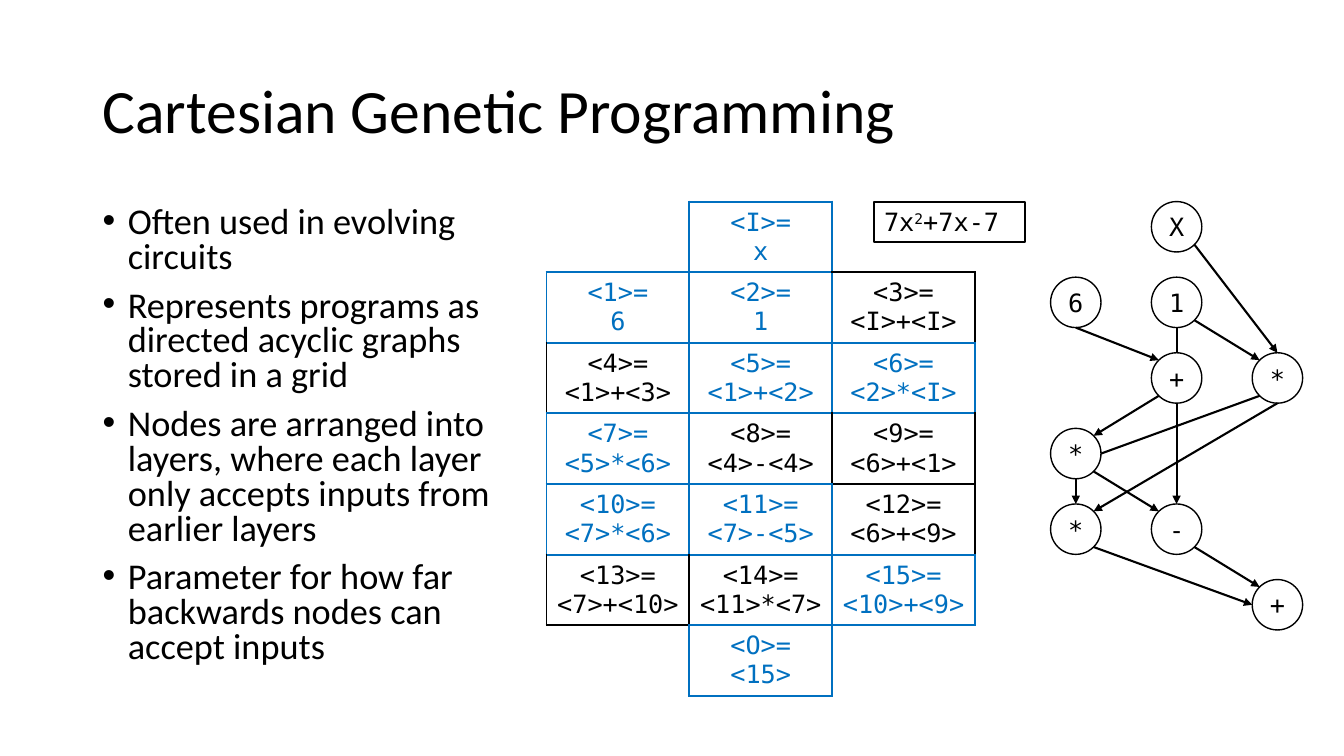
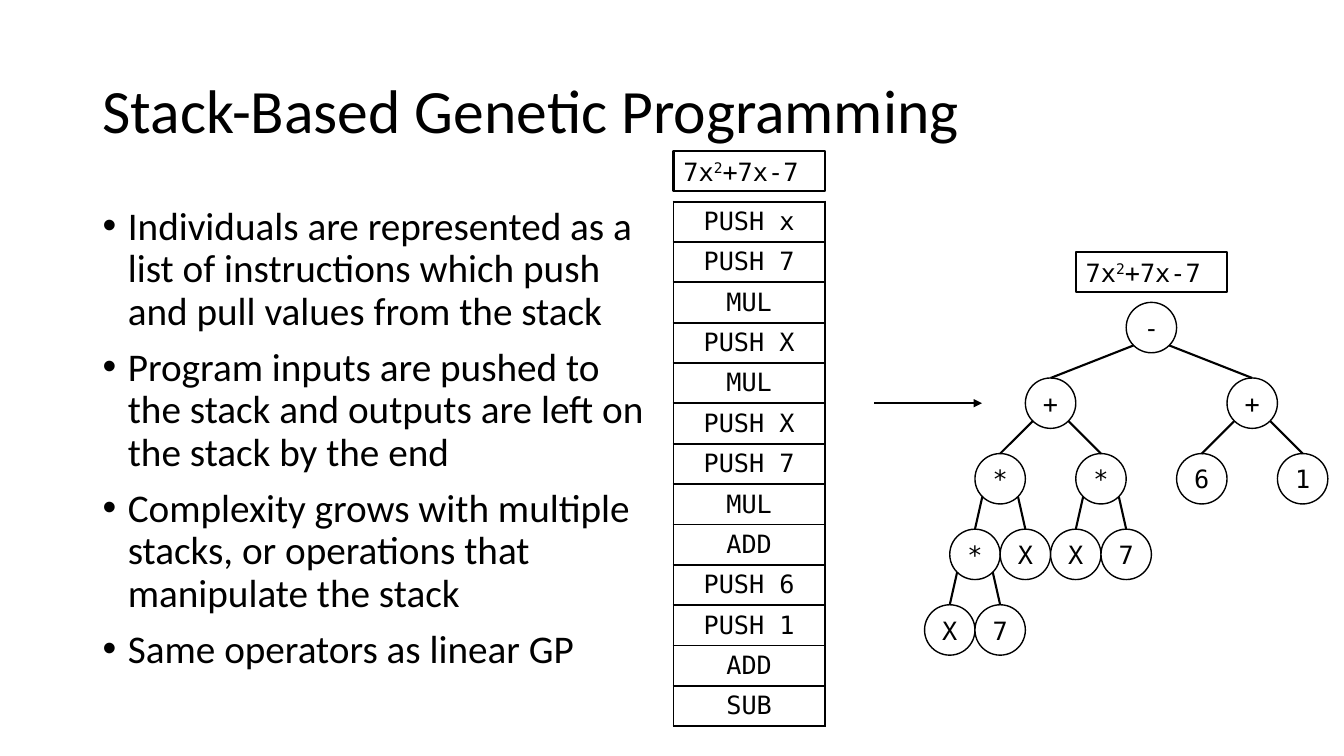
"""Build two slides on Cartesian and stack-based genetic programming."""
import math
from typing import Any, NamedTuple

from lxml import etree
from pptx import Presentation
from pptx.dml.color import RGBColor
from pptx.enum.shapes import MSO_CONNECTOR, MSO_SHAPE
from pptx.enum.text import MSO_ANCHOR, MSO_AUTO_SIZE, PP_ALIGN
from pptx.oxml.ns import qn
from pptx.util import Inches, Pt

STRAIGHT = MSO_CONNECTOR.STRAIGHT
ELLIPSE = MSO_SHAPE.OVAL
MIDDLE = MSO_ANCHOR.MIDDLE
CENTER = PP_ALIGN.CENTER
LEFT = PP_ALIGN.LEFT
GROW = MSO_AUTO_SIZE.SHAPE_TO_FIT_TEXT

COLORS = {"black": "000000", "blue": "0070C0", "white": "FFFFFF"}
BODY_FONT = "Calibri"
CODE_FONT = "DejaVu Sans Mono"
CODE_SIZE = 18
TITLE_SIZE = 44
LINE_WIDTH = 1.5
NODE_SIZE = 0.5
BULLET_INDENT = 0.25
PLAIN_TABLE_STYLE = "{2D5ABB26-0587-4C30-8999-92F81FD0307C}"

TOP, TOP_LEFT, SIDE_LEFT, BOTTOM_LEFT, BOTTOM, BOTTOM_RIGHT, SIDE_RIGHT, TOP_RIGHT = range(8)


class Grid(NamedTuple):
    """Top-left corner and steps of a node grid, in inches."""
    left: float
    top: float
    column_step: float
    row_step: float


class Node(NamedTuple):
    """A labelled circle in a grid."""
    key: str
    label: str
    column: int
    row: int


class Link(NamedTuple):
    """A line between connection sites of two nodes."""
    start: str
    start_site: int
    end: str
    end_site: int
    arrow: bool = True


class Cell(NamedTuple):
    """Lines of a table cell and the colour of its text and edges."""
    lines: tuple[str, ...] = ()
    color: str = ""


class Bullets(NamedTuple):
    """The bullet list of a slide."""
    width: float
    size: float
    spacing: float
    items: tuple[str, ...]


CARTESIAN_BULLETS = Bullets(4.5, 25.9, 0.8, (
    "Often used in evolving circuits",
    "Represents programs as directed acyclic graphs stored in a grid",
    "Nodes are arranged into layers, where each layer only accepts inputs from earlier layers",
    "Parameter for how far backwards nodes can accept inputs",
))
STACK_BULLETS = Bullets(5.67, 28, 0.9, (
    "Individuals are represented as a list of instructions which push and pull values from the stack",
    "Program inputs are pushed to the stack and outputs are left on the stack by the end",
    "Complexity grows with multiple stacks, or operations that manipulate the stack",
    "Same operators as linear GP",
))

GENES = (
    ("", "<I>= x", ""),
    ("<1>= 6", "<2>= 1", "<3>= <I>+<I>"),
    ("<4>= <1>+<3>", "<5>= <1>+<2>", "<6>= <2>*<I>"),
    ("<7>= <5>*<6>", "<8>= <4>-<4>", "<9>= <6>+<1>"),
    ("<10>= <7>*<6>", "<11>= <7>-<5>", "<12>= <6>+<9>"),
    ("<13>= <7>+<10>", "<14>= <11>*<7>", "<15>= <10>+<9>"),
    ("", "<O>= <15>", ""),
)
UNUSED_GENES = {f"<{number}>=" for number in (3, 4, 8, 9, 12, 13, 14)}
INSTRUCTIONS = ("PUSH x", "PUSH 7", "MUL", "PUSH X", "MUL", "PUSH X", "PUSH 7",
                "MUL", "ADD", "PUSH 6", "PUSH 1", "ADD", "SUB")

GRAPH_GRID = Grid(10.42, 2, 1, 0.75)
GRAPH_NODES = (
    Node("x", "X", 1, 0), Node("one", "1", 1, 1), Node("six", "6", 0, 1),
    Node("seven", "+", 1, 2), Node("x_times", "*", 2, 2), Node("product", "*", 0, 3),
    Node("square", "*", 0, 4), Node("minus", "-", 1, 4), Node("output", "+", 2, 5),
)
GRAPH_LINKS = (
    Link("x", BOTTOM_RIGHT, "x_times", TOP),
    Link("one", BOTTOM, "seven", TOP, False),
    Link("six", BOTTOM, "seven", TOP_LEFT),
    Link("seven", BOTTOM_LEFT, "product", TOP_RIGHT),
    Link("x_times", BOTTOM_LEFT, "product", SIDE_RIGHT, False),
    Link("one", BOTTOM_RIGHT, "x_times", TOP_LEFT),
    Link("product", BOTTOM, "square", TOP),
    Link("x_times", BOTTOM, "square", TOP_RIGHT),
    Link("product", BOTTOM_RIGHT, "minus", TOP_LEFT),
    Link("seven", BOTTOM, "minus", TOP),
    Link("minus", BOTTOM_RIGHT, "output", TOP_LEFT),
    Link("square", BOTTOM_RIGHT, "output", SIDE_LEFT),
)

TREE_GRID = Grid(9.17, 3, 0.25, 0.75)
TREE_NODES = (
    Node("root", "-", 8, 0), Node("sum", "+", 4, 1), Node("seven", "+", 12, 1),
    Node("square", "*", 2, 2), Node("linear", "*", 6, 2),
    Node("six", "6", 10, 2), Node("one", "1", 14, 2),
    Node("product", "*", 1, 3), Node("square_x", "X", 3, 3),
    Node("linear_x", "X", 5, 3), Node("linear_7", "7", 7, 3),
    Node("product_x", "X", 0, 4), Node("product_7", "7", 2, 4),
)
TREE_CHILDREN = {
    "root": ("sum", "seven"), "sum": ("square", "linear"), "seven": ("six", "one"),
    "square": ("product", "square_x"), "linear": ("linear_x", "linear_7"),
    "product": ("product_x", "product_7"),
}
TREE_LINKS = tuple(
    Link(parent, site, child, TOP, False)
    for parent, children in TREE_CHILDREN.items()
    for site, child in zip((BOTTOM_LEFT, BOTTOM_RIGHT), children)
)


def rgb(name: str) -> RGBColor:
    """Look up a named colour."""
    return RGBColor.from_string(COLORS[name])


def apply_format(target: Any, values: dict[str, Any]) -> None:
    """Set each attribute named in a dict of format values."""
    for name, value in values.items():
        setattr(target, name, value)


def add_run(paragraph: Any, text: str, font: str, size: float, color: str = "black") -> Any:
    """Add a formatted run to a paragraph."""
    run = paragraph.add_run()
    run.text = text
    apply_format(run.font, {"name": font, "size": Pt(size)})
    run.font.color.rgb = rgb(color)
    return run


def outline(shape: Any, width: float) -> None:
    """Give a shape or connector a black line."""
    shape.line.color.rgb = rgb("black")
    shape.line.width = Pt(width)


def add_text_frame(slide: Any, left: float, top: float, width: float, height: float) -> Any:
    """Add a wrapping text box and return its frame."""
    box = slide.shapes.add_textbox(Inches(left), Inches(top), Inches(width), Inches(height))
    box.text_frame.word_wrap = True
    return box.text_frame


def add_bullets(slide: Any, bullets: Bullets) -> None:
    """Add the bullet list."""
    frame = add_text_frame(slide, 0.92, 2, bullets.width, 4.76)
    for index, item in enumerate(bullets.items):
        paragraph = frame.add_paragraph() if index else frame.paragraphs[0]
        apply_format(paragraph, {"line_spacing": bullets.spacing, "space_before": Pt(10)})
        properties = paragraph._p.get_or_add_pPr()
        indent = Inches(BULLET_INDENT)
        properties.set("marL", str(indent))
        properties.set("indent", str(-indent))
        etree.SubElement(properties, qn("a:buFont"), typeface="Arial")
        etree.SubElement(properties, qn("a:buChar"), char="•")
        add_run(paragraph, item, BODY_FONT, bullets.size)


def add_content_slide(presentation: Any, title: str, bullets: Bullets) -> Any:
    """Add a blank slide with a title and bullets."""
    slide = presentation.slides.add_slide(presentation.slide_layouts[6])
    frame = add_text_frame(slide, 0.92, 0.4, 11.5, 1.45)
    frame.vertical_anchor = MIDDLE
    frame.paragraphs[0].line_spacing = 0.9
    add_run(frame.paragraphs[0], title, BODY_FONT, TITLE_SIZE)
    add_bullets(slide, bullets)
    return slide


def add_formula(slide: Any, left: float, top: float) -> None:
    """Add the framed polynomial."""
    box = slide.shapes.add_textbox(Inches(left), Inches(top), Inches(1.5), Inches(0.4))
    outline(box, LINE_WIDTH)
    apply_format(box.text_frame, {"word_wrap": True, "auto_size": GROW})
    paragraph = box.text_frame.paragraphs[0]
    paragraph.alignment = LEFT
    for text, baseline in (("7x", 0), ("2", 30000), ("+7x-7", 0)):
        run = add_run(paragraph, text, CODE_FONT, CODE_SIZE)
        run._r.get_or_add_rPr().set("baseline", str(baseline))


def add_node(slide: Any, grid: Grid, node: Node) -> Any:
    """Add a circle at its grid place."""
    circle = slide.shapes.add_shape(
        ELLIPSE, Inches(grid.left + node.column * grid.column_step),
        Inches(grid.top + node.row * grid.row_step), Inches(NODE_SIZE), Inches(NODE_SIZE))
    circle.shadow.inherit = False
    circle.fill.solid()
    circle.fill.fore_color.rgb = rgb("white")
    outline(circle, 1)
    apply_format(circle.text_frame, {
        "margin_left": 0, "margin_right": 0, "margin_top": 0, "margin_bottom": 0,
        "word_wrap": False, "vertical_anchor": MIDDLE})
    paragraph = circle.text_frame.paragraphs[0]
    paragraph.alignment = CENTER
    add_run(paragraph, node.label, CODE_FONT, CODE_SIZE)
    return circle


def site_point(circle: Any, site: int) -> tuple[int, int]:
    """Return a circle's connection site, counted anticlockwise from the top."""
    angle = site * math.pi / 4
    radius = circle.width / 2
    return (round(circle.left + radius * (1 - math.sin(angle))),
            round(circle.top + radius * (1 - math.cos(angle))))


def add_line(slide: Any, start: tuple[int, int], end: tuple[int, int], arrow: bool) -> Any:
    """Add a straight line, with an arrowhead if asked."""
    connector = slide.shapes.add_connector(STRAIGHT, *start, *end)
    outline(connector, LINE_WIDTH)
    properties = connector.element.spPr
    if arrow:
        etree.SubElement(properties.find(qn("a:ln")), qn("a:tailEnd"), type="triangle")
    etree.SubElement(properties, qn("a:effectLst"))
    return connector


def add_graph(slide: Any, grid: Grid, nodes: tuple[Node, ...], links: tuple[Link, ...]) -> None:
    """Add nodes and the lines joined to them."""
    circles = {node.key: add_node(slide, grid, node) for node in nodes}
    for link in links:
        start, end = circles[link.start], circles[link.end]
        connector = add_line(slide, site_point(start, link.start_site),
                             site_point(end, link.end_site), link.arrow)
        joints = connector.element.nvCxnSpPr.cNvCxnSpPr
        for tag, circle, site in (("a:stCxn", start, link.start_site),
                                  ("a:endCxn", end, link.end_site)):
            etree.SubElement(joints, qn(tag), id=str(circle.shape_id), idx=str(site))


def edge_color(cells: list[list[Cell]], row: int, column: int, down: int, right: int) -> str:
    """Choose an edge's colour: blue wins over black, black over none."""
    colors = {cells[row][column].color}
    if 0 <= row + down < len(cells) and 0 <= column + right < len(cells[0]):
        colors.add(cells[row + down][column + right].color)
    return next((color for color in ("blue", "black") if color in colors), "")


def add_cell_table(slide: Any, cells: list[list[Cell]], left: float, width: float, row_height: float) -> None:
    """Add a table of centred code with coloured edges."""
    frame = slide.shapes.add_table(len(cells), len(cells[0]), Inches(left), Inches(2),
                                   Inches(width), Inches(row_height * len(cells)))
    table = frame.table
    apply_format(table, {"first_row": False, "horz_banding": False})
    next(frame.element.iter(qn("a:tableStyleId"))).text = PLAIN_TABLE_STYLE
    for row, row_cells in enumerate(cells):
        for column, content in enumerate(row_cells):
            cell = table.cell(row, column)
            cell.vertical_anchor = MIDDLE
            properties = cell._tc.get_or_add_tcPr()
            for tag, down, right in (("a:lnL", 0, -1), ("a:lnR", 0, 1), ("a:lnT", -1, 0), ("a:lnB", 1, 0)):
                color = edge_color(cells, row, column, down, right)
                if color:
                    edge = etree.SubElement(properties, qn(tag), w=str(Pt(LINE_WIDTH)))
                    etree.SubElement(etree.SubElement(edge, qn("a:solidFill")), qn("a:srgbClr"), val=COLORS[color])
            cell.fill.background()
            for index, text in enumerate(content.lines):
                paragraph = cell.text_frame.add_paragraph() if index else cell.text_frame.paragraphs[0]
                paragraph.alignment = CENTER
                add_run(paragraph, text, CODE_FONT, CODE_SIZE, content.color)


def gene_cell(text: str) -> Cell:
    """Turn a gene into a cell, black if the gene is unused."""
    lines = tuple(text.split())
    return Cell(lines, "black" if lines[0] in UNUSED_GENES else "blue") if lines else Cell()


def main() -> None:
    """Build and save the presentation."""
    presentation = Presentation()
    apply_format(presentation, {"slide_width": Inches(13.33), "slide_height": Inches(7.5)})

    slide = add_content_slide(presentation, "Cartesian Genetic Programming", CARTESIAN_BULLETS)
    add_cell_table(slide, [[gene_cell(text) for text in row] for row in GENES], 5.42, 4.25, 0.7)
    add_formula(slide, 8.67, 2)
    add_graph(slide, GRAPH_GRID, GRAPH_NODES, GRAPH_LINKS)

    slide = add_content_slide(presentation, "Stack-Based Genetic Programming", STACK_BULLETS)
    add_graph(slide, TREE_GRID, TREE_NODES, TREE_LINKS)
    add_formula(slide, 10.67, 2.5)
    add_cell_table(slide, [[Cell((text,), "black")] for text in INSTRUCTIONS], 6.68, 1.5, 0.4)
    add_formula(slide, 6.68, 1.5)
    add_line(slide, (Inches(8.67), Inches(4)), (Inches(9.74), Inches(4)), True)
    presentation.save("out.pptx")


if __name__ == "__main__":
    main()
